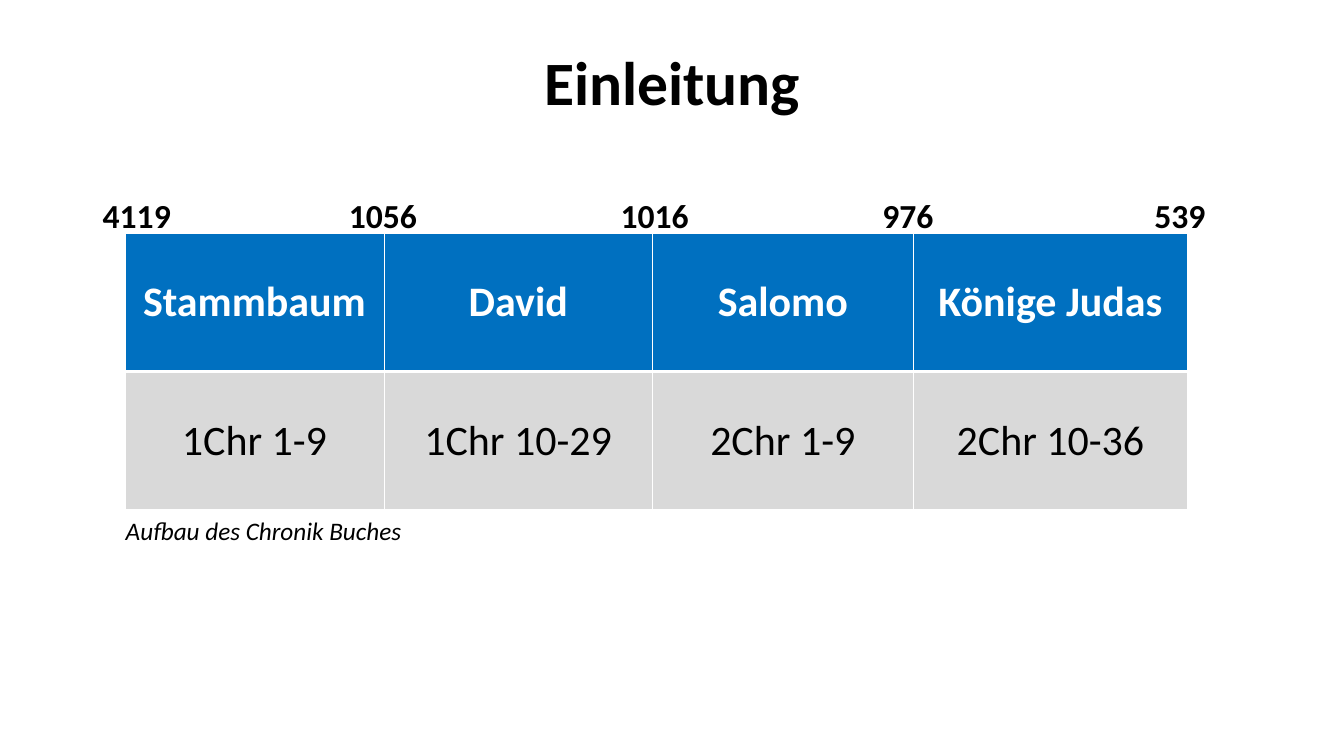
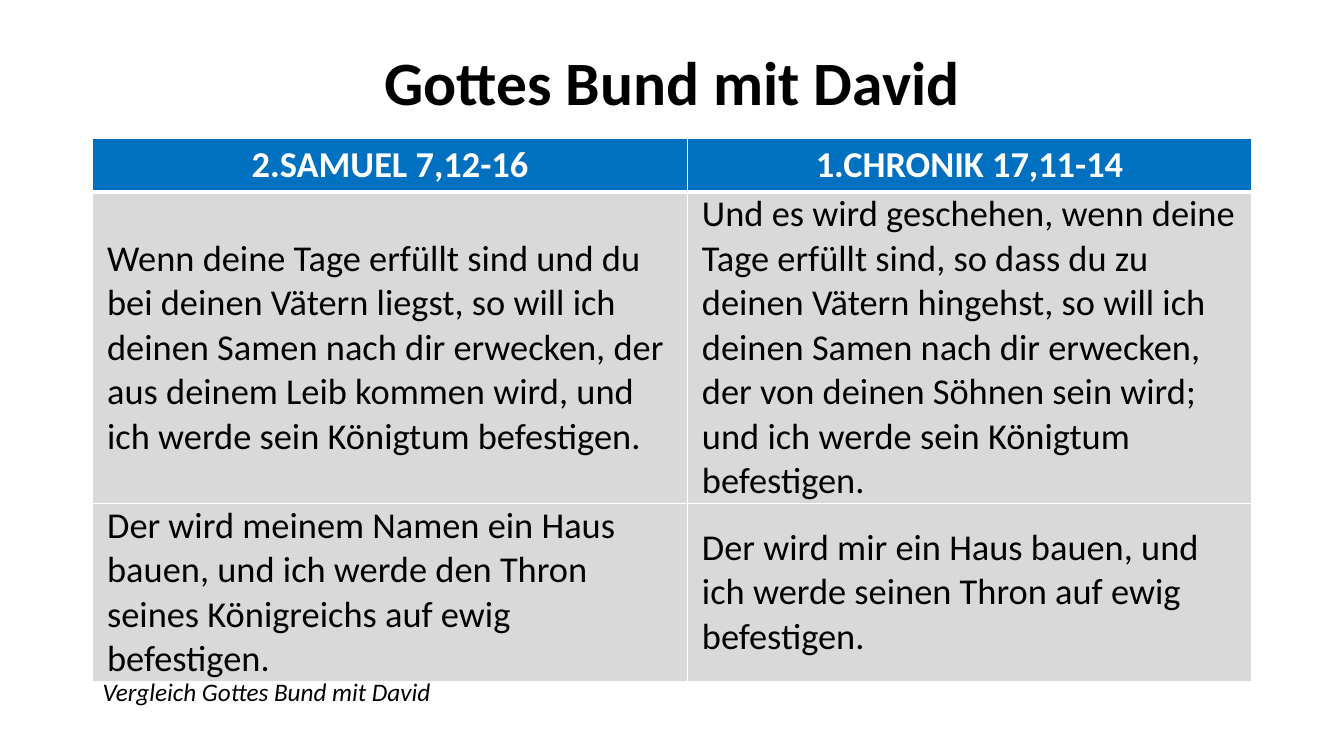
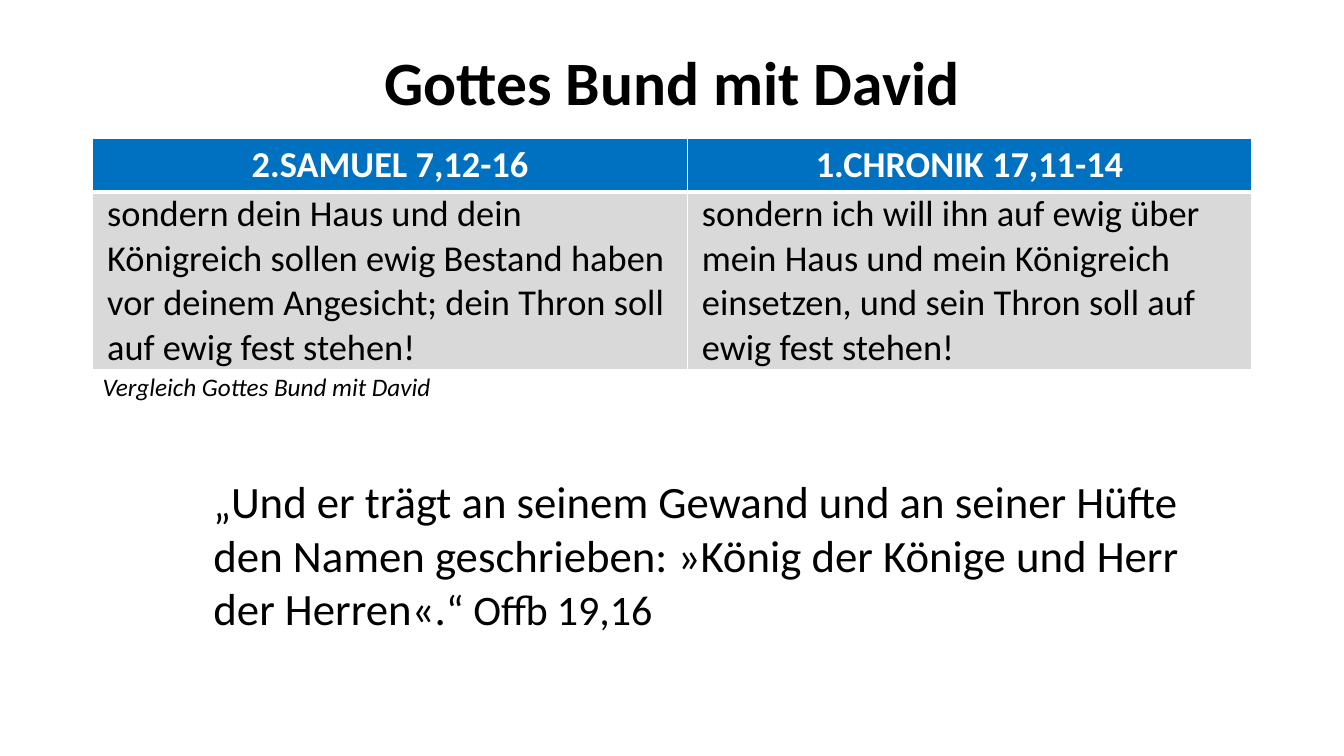
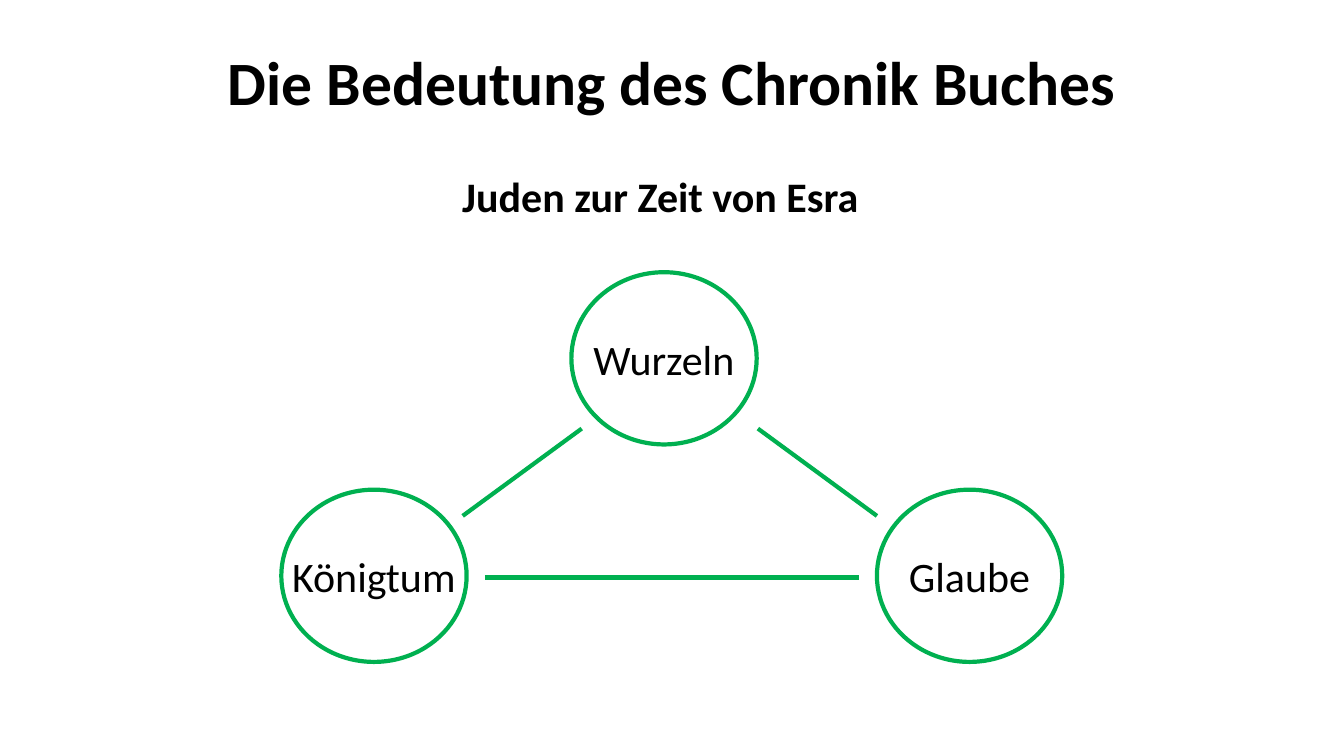
from dataclasses import dataclass

from lxml.etree import SubElement as Sub
from pptx import Presentation
from pptx.dml.color import RGBColor as RGB
from pptx.enum.shapes import MSO_CONNECTOR as Link, MSO_SHAPE as Form
from pptx.enum.text import MSO_ANCHOR as Anchor, MSO_AUTO_SIZE as Fit, PP_ALIGN as Align
from pptx.oxml.ns import qn
from pptx.util import Cm, Pt


@dataclass(frozen=True)
class Theme:
    font: str = "Calibri"
    black: RGB = RGB(0, 0, 0)
    white: RGB = RGB(255, 255, 255)
    blue: RGB = RGB(0x00, 0x70, 0xC0)
    grey: RGB = RGB(0xD9, 0xD9, 0xD9)
    green: RGB = RGB(0x00, 0xB0, 0x50)
    title: int = 44
    quote: int = 32
    body: int = 30
    verse: int = 26
    year: int = 24
    note: int = 18
    rule: int = 3
    thin: int = 1


T = Theme()

# Content: lengths in cm
HEAD = ["2.SAMUEL 7,12-16", "1.CHRONIK 17,11-14"]
BOND = "Gottes Bund mit David"
MATCH = "Vergleich Gottes Bund mit David"

INTRO = dict(
    rows=[["Stammbaum", "David", "Salomo", "Könige Judas"],
          ["1Chr 1-9", "1Chr 10-29", "2Chr 1-9", "2Chr 10-36"]],
    left=3.15, top=5.87, wide=[6.53, 6.76, 6.58, 6.91], high=[3.49, 3.49],
    size=T.body, align=Align.CENTER, note="Aufbau des Chronik Buches", shift=-0.23)
YEARS = ["4119", "1056", "1016", "976", "539"]
TABS = [6.2, 13.05, 19.65, 26.5]

PAIR = dict(left=2.34, top=3.48, wide=[14.99, 14.22], size=T.verse,
            align=Align.LEFT, note=MATCH, shift=0)
SEED = dict(
    PAIR, high=[1.35, 7.75, 4.35],
    rows=[HEAD,
          ["Wenn deine Tage erfüllt sind und du bei deinen Vätern liegst, so will ich "
           "deinen Samen nach dir erwecken, der aus deinem Leib kommen wird, und ich "
           "werde sein Königtum befestigen.",
           "Und es wird geschehen, wenn deine Tage erfüllt sind, so dass du zu deinen "
           "Vätern hingehst, so will ich deinen Samen nach dir erwecken, der von deinen "
           "Söhnen sein wird; und ich werde sein Königtum befestigen."],
          ["Der wird meinem Namen ein Haus bauen, und ich werde den Thron seines "
           "Königreichs auf ewig befestigen.",
           "Der wird mir ein Haus bauen, und ich werde seinen Thron auf ewig "
           "befestigen."]])
THRONE = dict(
    PAIR, high=[1.35, 4.4],
    rows=[HEAD,
          ["sondern dein Haus und dein Königreich sollen ewig Bestand haben vor deinem "
           "Angesicht; dein Thron soll auf ewig fest stehen!",
           "sondern ich will ihn auf ewig über mein Haus und mein Königreich einsetzen, "
           "und sein Thron soll auf ewig fest stehen!"]])
QUOTE = [("„", T.body),
         ("Und er trägt an seinem Gewand und an seiner Hüfte den Namen geschrieben: "
          "»König der Könige und Herr der Herren«.", T.quote),
         ("“ Offb 19,16", T.body)]

RINGS = [("Königtum", 7.09, 12.34), ("Wurzeln", 14.4, 6.86), ("Glaube", 22.1, 12.34)]
LINKS = [(11.66, 13, 14.66, 10.8), (19.1, 10.8, 22.1, 13), (12.22, 14.55, 21.64, 14.55)]


# Helpers
def style(run, size, color=T.black, bold=False, slant=False):
    font = run.font
    font.name, font.size = T.font, Pt(size)
    font.bold, font.italic = bold, slant
    font.color.rgb = color


def box(slide, x, y, w, h, runs, wrap=True, **look):
    frame = slide.shapes.add_textbox(Cm(x), Cm(y), Cm(w), Cm(h)).text_frame
    frame.word_wrap = wrap
    for text, size in runs:
        run = frame.paragraphs[0].add_run()
        run.text = text
        style(run, size, **look)
    return frame


def page(deck, text):
    slide = deck.slides.add_slide(deck.slide_layouts[5])
    head = slide.shapes.title
    head.left, head.top, head.width, head.height = Cm(2.34), Cm(1.02), Cm(29.21), Cm(2.26)
    frame = head.text_frame
    frame.text = text
    frame.auto_size, frame.vertical_anchor = Fit.NONE, Anchor.MIDDLE
    para = frame.paragraphs[0]
    para.alignment, para.line_spacing = Align.CENTER, 0.9
    style(para.runs[0], T.title, bold=True)
    return slide


def border(cell, row):
    props = cell._tc.get_or_add_tcPr()
    thick = {"T": row == 1, "B": row == 0}
    for side in "LRTB":
        width = T.rule if thick.get(side) else T.thin
        line = Sub(props, qn(f"a:ln{side}"), w=str(Pt(width)))
        Sub(Sub(line, qn("a:solidFill")), qn("a:srgbClr"), val=str(T.white))


def grid(slide, rows, left, top, wide, high, size, align, note, shift):
    table = slide.shapes.add_table(len(rows), len(wide), Cm(left), Cm(top),
                                   Cm(sum(wide)), Cm(sum(high))).table
    for col, w in zip(table.columns, wide):
        col.width = Cm(w)
    for r, texts in enumerate(rows):
        table.rows[r].height = Cm(high[r])
        first = r == 0
        for c, text in enumerate(texts):
            cell = table.cell(r, c)
            border(cell, r)
            cell.fill.solid()
            cell.fill.fore_color.rgb = T.blue if first else T.grey
            cell.margin_left = cell.margin_right = Cm(0.36)
            cell.margin_top = cell.margin_bottom = 0
            cell.vertical_anchor = Anchor.MIDDLE
            cell.text_frame.text = text
            para = cell.text_frame.paragraphs[0]
            para.alignment = Align.CENTER if first else align
            style(para.runs[0], size, T.white if first else T.black, bold=first)
    # Caption right below the table
    box(slide, left + shift, top + sum(high), 9, 1.02, [(note, T.note)],
        wrap=False, slant=True)


def pen(line):
    line.color.rgb, line.width = T.green, Pt(T.rule)


def ring(slide, text, x, y):
    oval = slide.shapes.add_shape(Form.OVAL, Cm(x), Cm(y), Cm(4.67), Cm(4.34))
    oval.shadow.inherit = False
    oval.fill.background()
    pen(oval.line)
    frame = oval.text_frame
    frame.text = text
    frame.word_wrap, frame.vertical_anchor = False, Anchor.MIDDLE
    frame.margin_left = frame.margin_right = 0
    frame.paragraphs[0].alignment = Align.CENTER
    style(frame.paragraphs[0].runs[0], T.body)


def link(slide, *ends):
    line = slide.shapes.add_connector(Link.STRAIGHT, *map(Cm, ends))
    pen(line.line)
    Sub(line._element.spPr, qn("a:effectLst"))


# Slides
def main():
    deck = Presentation()
    deck.slide_width, deck.slide_height = Cm(33.87), Cm(19.05)

    # Outline of the book with years over the column edges
    slide = page(deck, "Einleitung")
    grid(slide, **INTRO)
    frame = box(slide, 2.34, 4.78, 31.19, 1.27, [("\t".join(YEARS), T.year)], bold=True)
    frame.vertical_anchor = Anchor.MIDDLE
    stops = Sub(frame.paragraphs[0]._p.get_or_add_pPr(), qn("a:tabLst"))
    for pos in TABS:
        Sub(stops, qn("a:tab"), pos=str(Cm(pos)), algn="l")

    # The two accounts side by side
    grid(page(deck, BOND), **SEED)
    slide = page(deck, BOND)
    grid(slide, **THRONE)
    box(slide, 5.13, 11.81, 25.73, 4.37, QUOTE)

    # Triangle of meanings
    slide = page(deck, "Die Bedeutung des Chronik Buches")
    box(slide, 11.4, 4.17, 11.05, 1.55, [("Juden zur Zeit von Esra", T.body)], bold=True)
    for item in RINGS:
        ring(slide, *item)
    for ends in LINKS:
        link(slide, *ends)

    deck.save("out.pptx")


if __name__ == "__main__":
    main()
